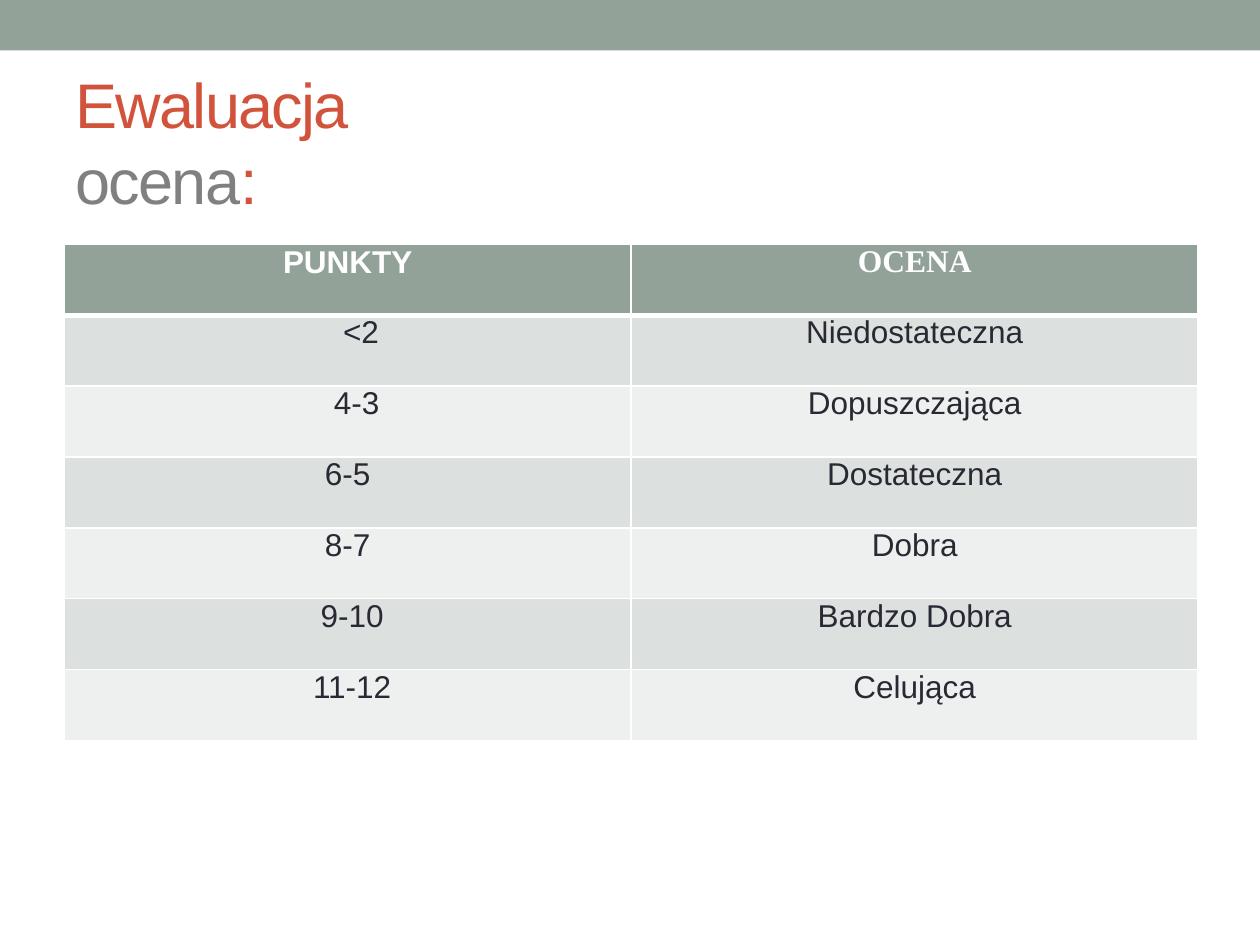
import pptx
import pptx.dml.color
import pptx.enum.shapes
import pptx.enum.text
import pptx.oxml
import pptx.oxml.ns
import pptx.util

RGBColor = pptx.dml.color.RGBColor
SAGE = RGBColor(0x93, 0xA2, 0x99)
BAND_DARK = RGBColor(0xDC, 0xE0, 0xDE)
BAND_LIGHT = RGBColor(0xEE, 0xF0, 0xEF)
RED = RGBColor(0xD2, 0x53, 0x3C)
GRAY = RGBColor(0x80, 0x80, 0x80)
INK = RGBColor(0x29, 0x29, 0x34)
WHITE = RGBColor(0xFF, 0xFF, 0xFF)

WIDTH = pptx.util.Inches(10)
HEIGHT = pptx.util.Inches(7.5)
ROW_HEIGHT = pptx.util.Inches(0.5625)
CELL_MARGIN = 0.07

HEADINGS = (("PUNKTY", "Arial"), ("OCENA", "Times New Roman"))
# points, grade, indent of the points in inches
GRADES = (
    ("<2", "Niedostateczna", 0.21),
    ("4-3", "Dopuszczająca", 0.14),
    ("6-5", "Dostateczna", 0),
    ("8-7", "Dobra", 0),
    ("9-10", "Bardzo Dobra", 0.07),
    ("11-12", "Celująca", 0.07),
)


def format_span(span, size, color, name="Arial", bold=False):
    span.font.size = pptx.util.Pt(size)
    span.font.name = name
    span.font.bold = bold
    span.font.color.rgb = color


def add_top_bar(page):
    bar = page.shapes.add_shape(
        pptx.enum.shapes.MSO_SHAPE.RECTANGLE, 0, 0, WIDTH, pptx.util.Inches(0.4))
    bar.shadow.inherit = False
    bar.fill.solid()
    bar.fill.fore_color.rgb = SAGE
    bar.line.fill.background()


def set_title(page):
    title = page.shapes.title
    title.left, title.top = pptx.util.Inches(0.5), pptx.util.Inches(0.58)
    title.width, title.height = pptx.util.Inches(9), pptx.util.Inches(1.08)
    frame = title.text_frame
    frame.word_wrap = True
    frame.auto_size = pptx.enum.text.MSO_AUTO_SIZE.NONE
    frame.vertical_anchor = pptx.enum.text.MSO_ANCHOR.MIDDLE
    para = frame.paragraphs[0]
    para.alignment = pptx.enum.text.PP_ALIGN.LEFT
    for text, color in (("Ewaluacja", RED), ("ocena", GRAY), (":", RED)):
        span = para.add_run()
        span.text = text
        format_span(span, 36, color)
        span.font._element.set("spc", "-100")
        if text == "Ewaluacja":
            para.add_line_break()


def set_borders(cell, bottom):
    properties = cell._tc.get_or_add_tcPr()
    widths = (("lnL", 1), ("lnR", 1), ("lnT", 1), ("lnB", bottom))
    for position, (side, width) in enumerate(widths):
        line = pptx.oxml.parse_xml(
            f'<a:{side} {pptx.oxml.ns.nsdecls("a")} w="{pptx.util.Pt(width)}">'
            f'<a:solidFill><a:srgbClr val="{WHITE}"/></a:solidFill></a:{side}>')
        properties.insert(position, line)


def fill_cell(cell, text, fill, color, name="Arial", bold=False, indent=0, bottom=1):
    cell.margin_left = pptx.util.Inches(CELL_MARGIN + indent)
    cell.margin_right = pptx.util.Inches(CELL_MARGIN)
    cell.margin_top = cell.margin_bottom = 0
    cell.fill.solid()
    cell.fill.fore_color.rgb = fill
    set_borders(cell, bottom)
    cell.text_frame.text = text
    para = cell.text_frame.paragraphs[0]
    para.alignment = pptx.enum.text.PP_ALIGN.CENTER
    format_span(para.runs[0], 18, color, name, bold)


def add_grade_table(page):
    rows = len(GRADES) + 1
    table = page.shapes.add_table(
        rows, len(HEADINGS), pptx.util.Inches(0.51), pptx.util.Inches(1.94),
        pptx.util.Inches(9), ROW_HEIGHT * rows).table
    for column, (heading, name) in enumerate(HEADINGS):
        fill_cell(table.cell(0, column), heading, SAGE, WHITE, name, bold=True, bottom=3)
    for row, (points, grade, indent) in enumerate(GRADES, start=1):
        fill = BAND_DARK if row % 2 else BAND_LIGHT
        fill_cell(table.cell(row, 0), points, fill, INK, indent=indent)
        fill_cell(table.cell(row, 1), grade, fill, INK)
    for column in range(len(HEADINGS)):
        # the first band meets the heading with the same thick line
        top = table.cell(1, column)._tc.tcPr.find(pptx.oxml.ns.qn("a:lnT"))
        top.set("w", str(pptx.util.Pt(3)))


def main():
    deck = pptx.Presentation()
    deck.slide_width, deck.slide_height = WIDTH, HEIGHT
    page = deck.slides.add_slide(deck.slide_layouts[5])
    add_top_bar(page)
    set_title(page)
    add_grade_table(page)
    deck.save("out.pptx")


if __name__ == "__main__":
    main()
